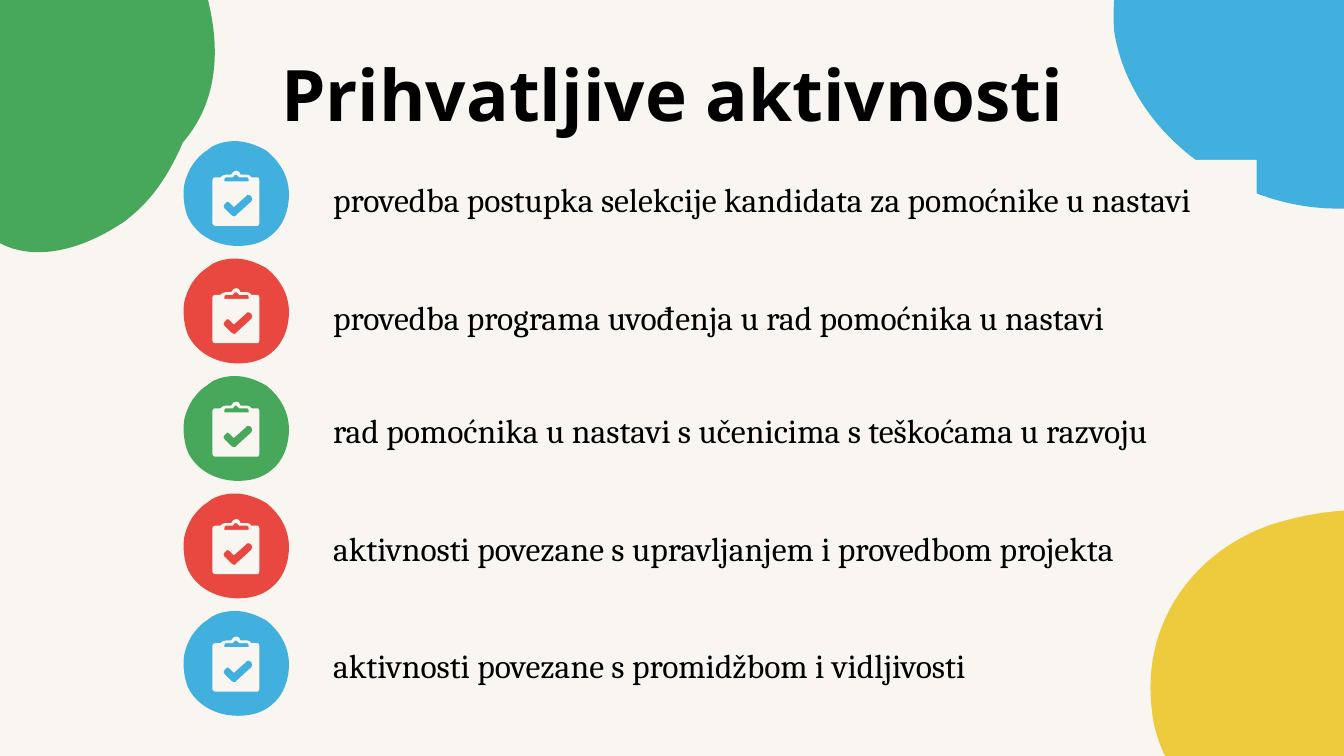
from math import cos, radians, sin

from lxml import etree
from pptx import Presentation
from pptx.dml.color import RGBColor
from pptx.enum.shapes import MSO_SHAPE
from pptx.enum.text import MSO_ANCHOR, PP_ALIGN
from pptx.oxml.ns import qn
from pptx.util import Inches, Pt

RECT = MSO_SHAPE.RECTANGLE
TOP = MSO_ANCHOR.TOP
LEFT, CENTER = PP_ALIGN.LEFT, PP_ALIGN.CENTER

CREAM = RGBColor(0xF9, 0xF6, 0xF2)
BLACK = RGBColor(0, 0, 0)
BLUE = RGBColor(0x41, 0xB0, 0xDF)
RED = RGBColor(0xE9, 0x48, 0x41)
GREEN = RGBColor(0x47, 0xA8, 0x5C)
YELLOW = RGBColor(0xEE, 0xCB, 0x3C)

LOWER = """M 301 103 C 291 82 274 65 256 52 219 1 148 4 97 20 40 39 -1 92 7 158
8 170 12 183 18 195 39 238 84 274 130 257 141 254 152 245 157 233
164 220 166 205 179 197 195 186 215 201 232 209 255 220 281 221 298 199
317 177 315 143 305 114 304 110 302 107 301 103 Z"""
UPPER = """M 209 16 C 188 9 166 6 142 10 137 11 128 13 121 15 102 18 83 27 68 39
50 50 37 65 28 82 13 109 7 142 9 173 18 230 63 275 118 295
151 307 189 309 223 298 265 286 296 249 310 209 327 163 315 114 284 73
264 47 239 26 209 16 Z"""
CORNER = """M 196 292 C 215 277 227 257 236 236 277 189 258 119 231 73
199 21 138 -7 75 15 63 19 52 26 41 34 3 65 -22 118 5 159 11 170 22 178 35 180
49 184 64 183 75 193 90 207 79 230 75 248 70 273 75 299 100 311
127 325 160 315 186 299 189 297 193 295 196 292 Z"""
DISC = """M 39 0 C 33 0 28 1 22 4 21 5 19 6 18 7 13 10 10 14 7 18 4 23 2 28 1 33
0 41 1 50 4 57 11 71 26 78 41 78 50 78 59 76 66 70 75 63 79 51 79 40
79 26 72 15 62 7 55 3 47 0 39 0 Z"""
BOARD = """M 18 3 C 18 3 19 3 19 4 19 5 20 5 20 5 L 26 5 C 27 5 27 6 27 7
L 27 8 9 8 9 7 C 9 6 9 5 10 5 L 15 5 C 16 5 16 5 16 4 16 3 17 3 18 3 Z
M 27 18 C 27 18 28 18 29 19 30 20 30 22 29 23 L 18 33
C 18 34 17 34 16 34 16 34 15 34 14 33 L 9 28 C 8 27 8 26 9 25
L 10 24 C 10 24 11 23 11 23 12 23 13 24 13 24 L 16 27 25 19 C 25 18 26 18 27 18 Z
M 18 0 C 16 0 15 1 14 3 L 10 3 C 8 3 7 4 6 5 L 2 5 C 1 5 0 6 0 7
L 0 39 C 0 40 1 41 2 41 L 34 41 C 34 41 35 40 35 39 L 35 7 C 35 6 34 5 34 5
L 29 5 C 29 4 27 3 26 3 L 21 3 C 21 1 19 0 18 0 Z"""

BLOBS = [
    (LOWER, 8.5, 3.7, YELLOW, 64.7),
    (UPPER, 8.2, -1.5, BLUE, 19.4),
    (CORNER, -1, -1.3, GREEN, 141.7),
]
ROWS = [
    ("provedba postupka selekcije kandidata za pomoćnike u nastavi", BLUE, 6.97, 0.14),
    ("provedba programa uvođenja u rad pomoćnika u nastavi", RED, 6.97, 0.14),
    ("rad pomoćnika u nastavi s učenicima s teškoćama u razvoju", GREEN, 6.97, 0.11),
    ("aktivnosti povezane s upravljanjem i provedbom projekta", RED, 6.41, 0.11),
    ("aktivnosti povezane s promidžbom i vidljivosti", BLUE, 5.32, 0.11),
]


def turn(x, y, angle):
    """Rotate a point clockwise about the slide's corner."""
    a = radians(angle)
    return x * cos(a) - y * sin(a), x * sin(a) + y * cos(a)


def paint(shape, color):
    """Give a shape a plain fill with no line or shadow."""
    shape.fill.solid()
    shape.fill.fore_color.rgb = color
    shape.line.fill.background()
    shape.shadow.inherit = False


def parse(outline):
    """Split an outline into commands with their points in inches."""
    steps = []
    for word in outline.split():
        if word.isalpha():
            steps.append((word, []))
        else:
            steps[-1][1].append(int(word) / 100)
    return [(cmd, list(zip(nums[::2], nums[1::2]))) for cmd, nums in steps]


def bend(shape, steps):
    """Merge each three points of a curve command into a Bezier segment."""
    nodes = iter(list(next(shape.element.iter(qn("a:path")))))
    for cmd, points in steps:
        if cmd != "C":
            for _ in points or [None]:
                next(nodes)
            continue
        for _ in points[::3]:
            trio = [next(nodes) for _ in range(3)]
            curve = etree.Element(qn("a:cubicBezTo"))
            trio[0].addprevious(curve)
            for node in trio:
                curve.append(node[0])
                node.getparent().remove(node)


def draw(shapes, outline, left, top, color, angle=0):
    """Draw a curved outline from its left top, held at an angle."""
    steps = parse(outline)
    pen = None
    for cmd, points in steps:
        spots = [turn(Inches(left + x), Inches(top + y), -angle) for x, y in points]
        if cmd == "Z":
            pen.add_line_segments([], close=True)
        elif cmd != "M":
            pen.add_line_segments(spots, close=False)
        elif pen:
            pen.move_to(*spots[0])
        else:
            pen = shapes.build_freeform(*spots[0], scale=1.0)
    shape = pen.convert_to_shape()
    bend(shape, steps)
    paint(shape, color)
    if angle:
        wide, high = shape.width / 2, shape.height / 2
        x, y = turn(shape.left + wide, shape.top + high, angle)
        shape.left, shape.top = round(x - wide), round(y - high)
        shape.rotation = angle


def write(shape, text, size, font, align, bold=False):
    """Set one line of styled text in a shape."""
    frame = shape.text_frame
    frame.text = text
    frame.word_wrap = True
    frame.vertical_anchor = TOP
    frame.margin_left = frame.margin_right = Inches(0.1)
    frame.margin_top = frame.margin_bottom = Inches(0.1)
    line = frame.paragraphs[0]
    line.alignment = align
    line.line_spacing = 1.15
    style = line.runs[0].font
    style.size, style.name, style.bold = Pt(size), font, bold
    style.color.rgb = BLACK


def head(slide, left, top, width, height):
    """Place the title in front of the blobs."""
    title = slide.shapes.title
    title.left, title.top = Inches(left), Inches(top)
    title.width, title.height = Inches(width), Inches(height)
    write(title, "Prihvatljive aktivnosti", 38, "Open Sans", CENTER, True)
    title.element.getparent().append(title.element)


def items(slide, left, top, height):
    """Place the badges and their texts at equal steps."""
    step = height / len(ROWS)
    tops = [top + i * step for i in range(len(ROWS))]
    for y, (text, color, width, drop) in zip(tops, ROWS):
        box = slide.shapes.add_shape(
            RECT, Inches(left + 1.02), Inches(y + drop), Inches(width), Inches(0.57))
        paint(box, CREAM)
        write(box, text, 18, "Cambria", LEFT)
        badge = slide.shapes.add_group_shape().shapes
        draw(badge, DISC, left, y, color)
        draw(badge, BOARD, left + 0.22, y + drop + 0.08, CREAM)


def main():
    """Build and save the slide."""
    deck = Presentation()
    deck.slide_width = Inches(10)
    deck.slide_height = deck.slide_width * 9 // 16
    slide = deck.slides.add_slide(deck.slide_layouts[5])
    slide.background.fill.solid()
    slide.background.fill.fore_color.rgb = CREAM
    for blob in BLOBS:
        draw(slide.shapes, *blob)
    head(slide, 0.79, 0.18, 8.43, 0.67)
    items(slide, 1.36, 1.05, 4.37)
    deck.save("out.pptx")


if __name__ == "__main__":
    main()
